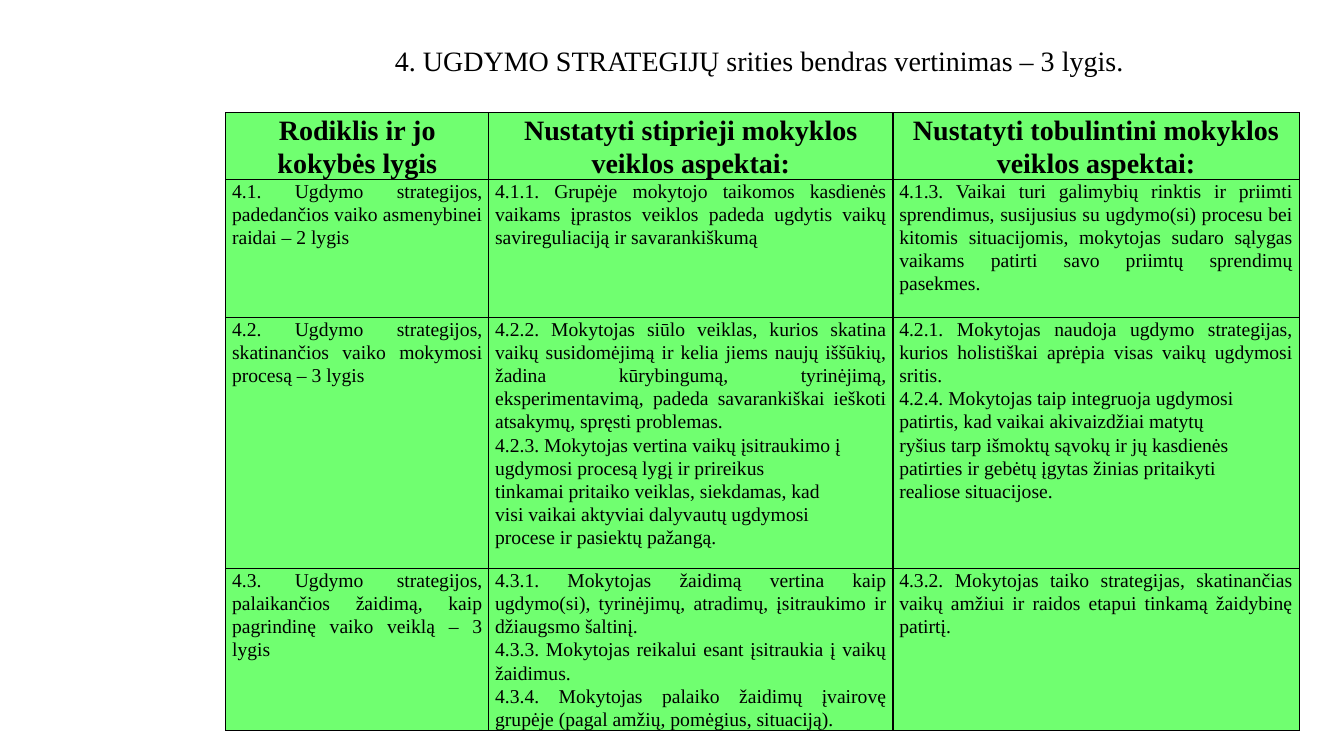
import pptx
import pptx.util
import pptx.dml.color
import pptx.enum.text
import pptx.oxml

Pt = pptx.util.Pt
ALIGN = pptx.enum.text.PP_ALIGN
ANCHOR = pptx.enum.text.MSO_ANCHOR

COLORS = {"text": "000000", "cell": "70FF70", "border": "000000"}
FONT_NAME = "Times New Roman"
COLUMN_WIDTHS = [187.9, 288.7, 290.2]
ROW_HEIGHTS = [46.1, 98.6, 179.3, 115.2]

TITLE = "4. UGDYMO STRATEGIJŲ srities bendras vertinimas – 3 lygis."
HEADERS = [
    ["Rodiklis ir jo kokybės lygis"],
    ["Nustatyti stiprieji mokyklos veiklos aspektai:"],
    ["Nustatyti tobulintini mokyklos veiklos aspektai:"],
]
BODY = [
    [
        ["4.1. Ugdymo strategijos, padedančios vaiko asmenybinei raidai – 2 lygis"],
        ["4.1.1. Grupėje mokytojo taikomos kasdienės vaikams įprastos veiklos padeda "
         "ugdytis vaikų savireguliaciją ir savarankiškumą"],
        ["4.1.3. Vaikai turi galimybių rinktis ir priimti sprendimus, susijusius su "
         "ugdymo(si) procesu bei kitomis situacijomis, mokytojas sudaro sąlygas "
         "vaikams patirti savo priimtų sprendimų pasekmes."],
    ],
    [
        ["4.2. Ugdymo strategijos, skatinančios vaiko mokymosi procesą – 3 lygis"],
        ["4.2.2. Mokytojas siūlo veiklas, kurios skatina vaikų susidomėjimą ir kelia "
         "jiems naujų iššūkių, žadina kūrybingumą, tyrinėjimą, eksperimentavimą, "
         "padeda savarankiškai ieškoti atsakymų, spręsti problemas.",
         "4.2.3. Mokytojas vertina vaikų įsitraukimo į",
         "ugdymosi procesą lygį ir prireikus",
         "tinkamai pritaiko veiklas, siekdamas, kad",
         "visi vaikai aktyviai dalyvautų ugdymosi",
         "procese ir pasiektų pažangą."],
        ["4.2.1. Mokytojas naudoja ugdymo strategijas, kurios holistiškai aprėpia "
         "visas vaikų ugdymosi sritis.",
         "4.2.4. Mokytojas taip integruoja ugdymosi",
         "patirtis, kad vaikai akivaizdžiai matytų",
         "ryšius tarp išmoktų sąvokų ir jų kasdienės",
         "patirties ir gebėtų įgytas žinias pritaikyti",
         "realiose situacijose."],
    ],
    [
        ["4.3. Ugdymo strategijos, palaikančios žaidimą, kaip pagrindinę vaiko "
         "veiklą – 3 lygis"],
        ["4.3.1. Mokytojas žaidimą vertina kaip ugdymo(si), tyrinėjimų, atradimų, "
         "įsitraukimo ir džiaugsmo šaltinį.",
         "4.3.3. Mokytojas reikalui esant įsitraukia į vaikų žaidimus.",
         "4.3.4. Mokytojas palaiko žaidimų įvairovę grupėje (pagal amžių, pomėgius, "
         "situaciją)."],
        ["4.3.2. Mokytojas taiko strategijas, skatinančias vaikų amžiui ir raidos "
         "etapui tinkamą žaidybinę patirtį."],
    ],
]


def apply(target, values):
    for name, value in values.items():
        setattr(target, name, value)


def color(name):
    return pptx.dml.color.RGBColor.from_string(COLORS[name])


def write_paragraphs(frame, texts, para_format, font_format):
    for index, text in enumerate(texts):
        para = frame.add_paragraph() if index else frame.paragraphs[0]
        apply(para, para_format)
        span = para.add_run()
        span.text = text
        apply(span.font, {"name": FONT_NAME, **font_format})
        span.font.color.rgb = color("text")


def add_borders(cell):
    properties = cell._tc.get_or_add_tcPr()
    for side in ("lnL", "lnR", "lnT", "lnB"):
        properties.append(pptx.oxml.parse_xml(
            f'<a:{side} xmlns:a="http://schemas.openxmlformats.org/drawingml/2006/main" '
            f'w="{Pt(1)}"><a:solidFill><a:srgbClr val="{COLORS["border"]}"/>'
            f'</a:solidFill></a:{side}>'))


def fill_cell(cell, texts, is_header):
    apply(cell, {
        "margin_left": Pt(4.5), "margin_right": Pt(4.5),
        "margin_top": 0, "margin_bottom": 0,
        "vertical_anchor": ANCHOR.MIDDLE if is_header else ANCHOR.TOP,
    })
    add_borders(cell)
    cell.fill.solid()
    cell.fill.fore_color.rgb = color("cell")
    write_paragraphs(
        cell.text_frame, texts,
        {"alignment": ALIGN.CENTER if is_header else ALIGN.JUSTIFY, "line_spacing": 1.07},
        {"size": Pt(20 if is_header else 14), "bold": is_header})


def add_title(page):
    box = page.shapes.title
    apply(box, {"left": Pt(173.5), "top": Pt(23.8), "width": Pt(738), "height": Pt(78.5)})
    apply(box.text_frame, {
        "vertical_anchor": ANCHOR.TOP, "margin_top": Pt(7.5), "word_wrap": True,
        "auto_size": pptx.enum.text.MSO_AUTO_SIZE.NONE,
    })
    write_paragraphs(box.text_frame, [TITLE],
                     {"alignment": ALIGN.CENTER, "line_spacing": 1.0},
                     {"size": Pt(20), "bold": False})


def add_assessment_table(page):
    rows = [HEADERS, *BODY]
    table = page.shapes.add_table(
        len(rows), len(HEADERS), Pt(161.3), Pt(80.6),
        Pt(sum(COLUMN_WIDTHS)), Pt(sum(ROW_HEIGHTS))).table
    for column, width in zip(table.columns, COLUMN_WIDTHS):
        column.width = Pt(width)
    for row, height in zip(table.rows, ROW_HEIGHTS):
        row.height = Pt(height)
    for row_index, row_texts in enumerate(rows):
        for column_index, texts in enumerate(row_texts):
            fill_cell(table.cell(row_index, column_index), texts, row_index == 0)


def main():
    deck = pptx.Presentation()
    apply(deck, {"slide_width": Pt(960), "slide_height": Pt(540)})
    page = deck.slides.add_slide(deck.slide_layouts[5])
    add_title(page)
    add_assessment_table(page)
    deck.save("out.pptx")


if __name__ == "__main__":
    main()
